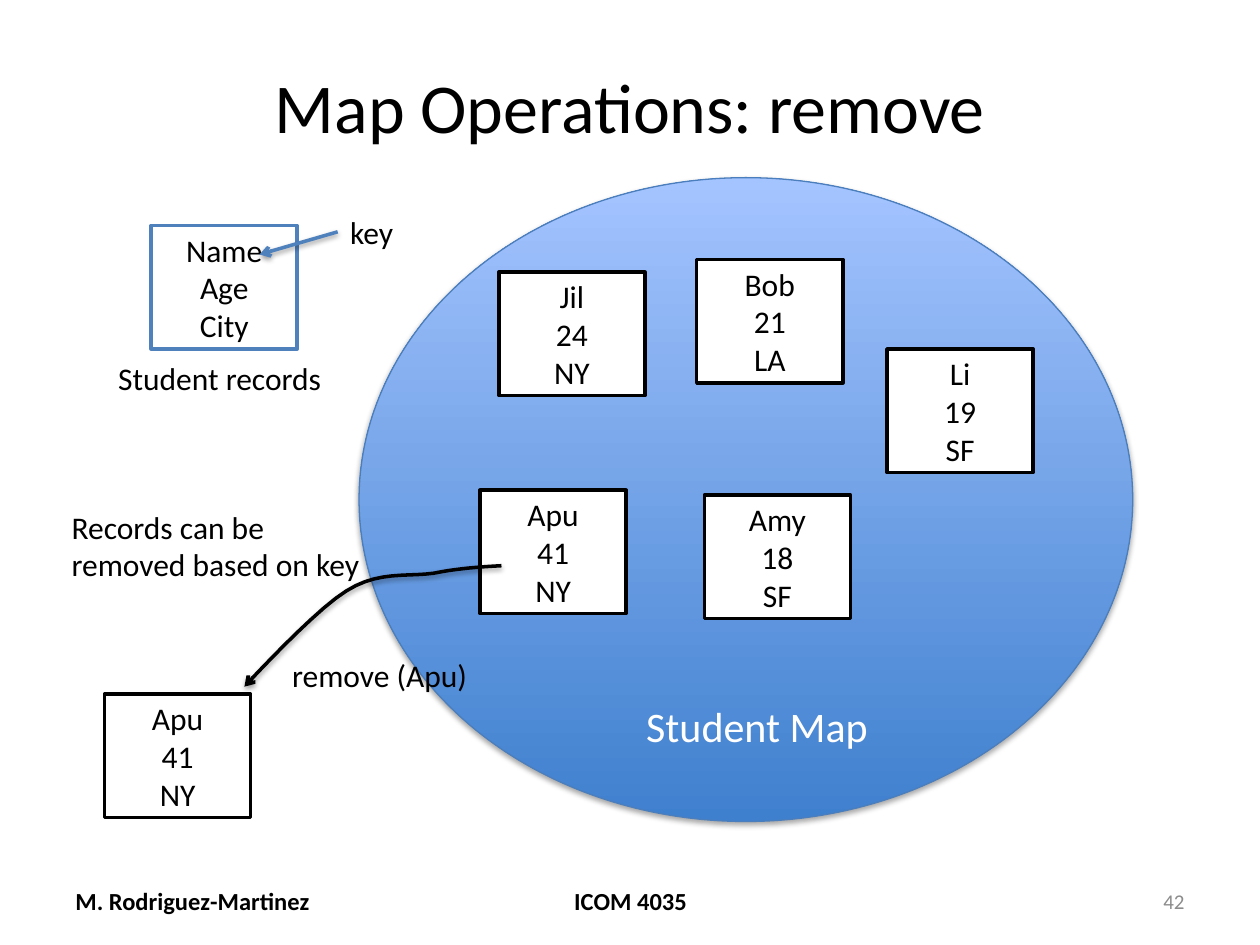
from dataclasses import dataclass

from lxml import etree
from pptx import Presentation, util as u
from pptx.dml import color as col
from pptx.enum import shapes, text
from pptx.oxml import ns

In = u.Inches
LEFT, MID, RIGHT = text.PP_ALIGN.LEFT, text.PP_ALIGN.CENTER, text.PP_ALIGN.RIGHT


@dataclass(frozen=True)
class Theme:
    font: str = "Calibri"
    ink: str = "000000"
    paper: str = "FFFFFF"
    blue: str = "4F81BD"
    rim: str = "4B7EBC"
    deep: str = "3F80CE"
    pale: str = "A4C4FF"
    grey: str = "8C8C8C"
    title: int = 40
    label: int = 24
    body: int = 18
    foot: int = 14
    page: int = 12
    line: float = 2


T = Theme()


def rgb(code):
    return col.RGBColor.from_string(code)


def assign(item, **vals):
    for name, val in vals.items():
        setattr(item, name, val)


def write(shape, lines, size=T.body, color=T.ink, align=LEFT, bold=False,
          wrap=True, anchor=text.MSO_ANCHOR.MIDDLE):
    frame = shape.text_frame
    assign(frame, text="\n".join(lines), word_wrap=wrap, vertical_anchor=anchor)
    for par in frame.paragraphs:
        par.alignment = align
        for run in par.runs:
            assign(run.font, name=T.font, size=u.Pt(size), bold=bold)
            run.font.color.rgb = rgb(color)


def stroke(shape, color, width=T.line):
    shape.line.color.rgb = rgb(color)
    shape.line.width = u.Pt(width)


def add_tip(shape):
    tip = etree.SubElement(shape.line._get_or_add_ln(), ns.qn("a:tailEnd"))
    tip.set("type", "arrow")


def add_shade(shape, alpha, drop):
    """Cast a soft black shadow straight down."""
    props = shape._element.spPr
    for old in props.findall(ns.qn("a:effectLst")):
        props.remove(old)
    list_ = etree.SubElement(props, ns.qn("a:effectLst"))
    shade = etree.SubElement(list_, ns.qn("a:outerShdw"), blurRad=str(u.Pt(3.1)),
                             dist=str(u.Pt(drop)), dir="5400000", rotWithShape="0")
    tint = etree.SubElement(shade, ns.qn("a:srgbClr"), val=T.ink)
    etree.SubElement(tint, ns.qn("a:alpha"), val=str(alpha * 1000))


def add_oval(slide, x, y, w, h):
    oval = slide.shapes.add_shape(shapes.MSO_SHAPE.OVAL, In(x), In(y), In(w), In(h))
    oval.fill.gradient()
    oval.fill.gradient_angle = 90
    for stop, code in zip(oval.fill.gradient_stops, (T.deep, T.pale)):
        stop.color.rgb = rgb(code)
    stroke(oval, T.rim, 0.75)
    add_shade(oval, 35, 1.8)


def add_card(slide, x, y, lines, edge=T.ink):
    card = slide.shapes.add_shape(shapes.MSO_SHAPE.RECTANGLE,
                                  In(x), In(y), In(1.16), In(0.98))
    card.shadow.inherit = False
    card.fill.solid()
    card.fill.fore_color.rgb = rgb(T.paper)
    stroke(card, edge)
    write(card, lines, align=MID)


def add_text(slide, x, y, w, h, lines, **style):
    box = slide.shapes.add_textbox(In(x), In(y), In(w), In(h))
    write(box, lines, **style)


def add_note(slide, x, y, w, h, *lines, **style):
    add_text(slide, x, y, w, h, lines, wrap=False,
             anchor=text.MSO_ANCHOR.TOP, **style)


def add_curve(slide, start, bends, steps=10):
    """Trace cubic bends, each given as two control points and an end."""
    points, a = [], start
    for b, c, d in bends:
        for i in range(1, steps + 1):
            t = i / steps
            s = 1 - t
            points.append(tuple(
                In(s**3 * p + 3 * s * s * t * q + 3 * s * t * t * r + t**3 * e)
                for p, q, r, e in zip(a, b, c, d)))
        a = d
    path = slide.shapes.build_freeform(*map(In, start))
    path.add_line_segments(points, close=False)
    curve = path.convert_to_shape()
    curve.fill.background()
    stroke(curve, T.ink)
    add_tip(curve)
    add_shade(curve, 38, 1.6)


def add_arrow(slide, start, end):
    arrow = slide.shapes.add_connector(shapes.MSO_CONNECTOR.STRAIGHT,
                                       *map(In, start + end))
    stroke(arrow, T.blue)
    add_tip(arrow)
    add_shade(arrow, 38, 1.6)


def main():
    deck = Presentation()
    assign(deck, slide_width=In(10), slide_height=In(7.5))
    slide = deck.slides.add_slide(deck.slide_layouts[6])

    # Map, title and footer
    add_oval(slide, 2.85, 1.41, 6.14, 5.11)
    add_text(slide, 0.5, 0.3, 9, 1.07, ["Map Operations: remove"],
             size=T.title, align=MID)
    add_text(slide, 0.5, 6.95, 2.33, 0.4, ["M. Rodriguez-Martinez"],
             size=T.foot, bold=True)
    add_text(slide, 3.42, 6.95, 3.17, 0.4, ["ICOM 4035"],
             size=T.foot, bold=True, align=MID)
    add_text(slide, 7.17, 6.95, 2.33, 0.4, ["42"],
             size=T.page, color=T.grey, align=RIGHT)

    # Records: the fields, those in the map, and the one taken out
    add_card(slide, 1.2, 1.79, ("Name", "Age", "City"), T.blue)
    apu = ("Apu", "41", "NY")
    for x, y, lines in (
        (3.96, 2.16, ("Jil", "24", "NY")),
        (5.53, 2.06, ("Bob", "21", "LA")),
        (3.81, 3.89, apu),
        (5.59, 3.93, ("Amy", "18", "SF")),
        (7.04, 2.77, ("Li", "19", "SF")),
        (0.83, 5.51, apu),
    ):
        add_card(slide, x, y, lines)

    # Notes
    add_note(slide, 0.84, 2.8, 1.84, 0.4, "Student records")
    add_note(slide, 5.03, 5.51, 1.98, 0.5, "Student Map", size=T.label, color=T.paper)
    add_note(slide, 0.47, 3.98, 2.52, 0.71, "Records can be", "removed based on key")
    add_note(slide, 2.68, 1.64, 0.56, 0.4, "key")

    # Arrows
    add_curve(slide, (3.98, 4.49), (
        ((3.81, 4.5), (3.64, 4.51), (3.44, 4.55)),
        ((3.23, 4.58), (3, 4.53), (2.75, 4.69)),
        ((2.5, 4.84), (1.94, 5.45), (1.94, 5.45)),
    ))
    add_arrow(slide, (2.68, 1.84), (2.06, 2.02))
    add_note(slide, 2.22, 5.16, 1.61, 0.4, "remove (Apu)")

    deck.save("out.pptx")


if __name__ == "__main__":
    main()
